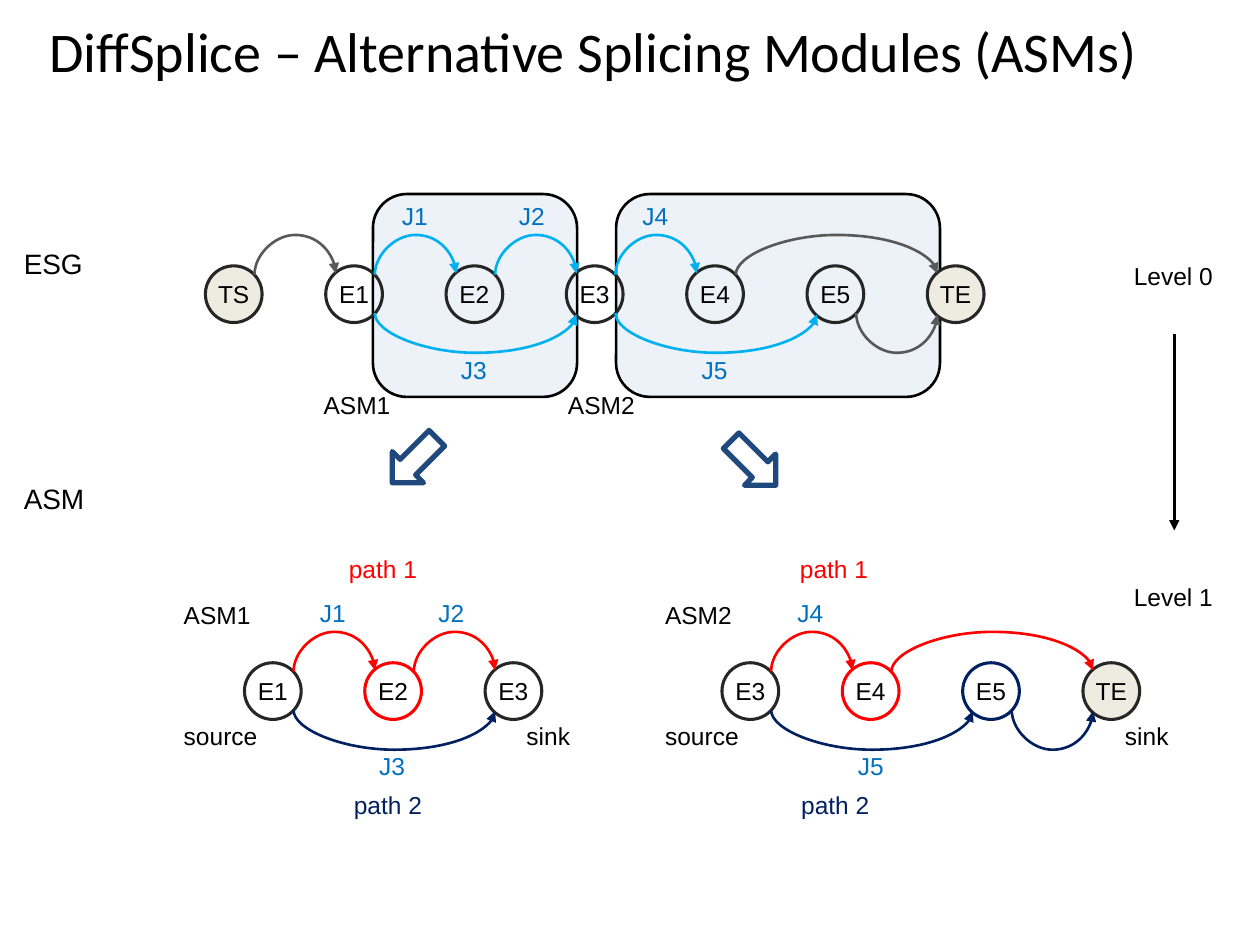
import pptx
import pptx.util
import pptx.dml.color
import pptx.enum.shapes
import pptx.enum.text
import pptx.oxml
import pptx.oxml.ns
from dataclasses import dataclass
from lxml import etree

Inches = pptx.util.Inches
Pt = pptx.util.Pt
SHAPE = pptx.enum.shapes.MSO_SHAPE
LINE = pptx.enum.shapes.MSO_CONNECTOR
ALIGN = pptx.enum.text.PP_ALIGN
ANCHOR = pptx.enum.text.MSO_ANCHOR
qn = pptx.oxml.ns.qn


@dataclass(frozen=True)
class Theme:
    font: str = "Arial"
    title_font: str = "Calibri"
    title: int = 32
    heading: int = 16
    body: int = 14
    black: str = "000000"
    white: str = "FFFFFF"
    ring: str = "262626"
    gray: str = "595959"
    sky: str = "00B0F0"
    blue: str = "0070C0"
    navy: str = "002060"
    red: str = "FF0000"
    panel: str = "DCE6F2"
    terminal: str = "EEECE1"
    arrow: str = "1F497D"


T = Theme()
NODE = 0.45    # node diameter
PITCH = 0.955  # distance between neighbouring nodes
BULGE = 0.32   # height of a junction arc
RISE = 0.01    # height difference between the ends of an arc


def rgb(color):
    return pptx.dml.color.RGBColor.from_string(color)


def add_run(p, text, size=T.body, color=T.black, font=T.font):
    r = p.add_run()
    r.text = text
    r.font.size = Pt(size)
    r.font.name = font
    r.font.color.rgb = rgb(color)


def add_label(s, text, x, y, w, color=T.black, size=T.body):
    tb = s.shapes.add_textbox(Inches(x), Inches(y), Inches(w),
                              Inches(0.37 if size == T.heading else 0.34))
    tf = tb.text_frame
    tf.word_wrap = False
    tf.auto_size = pptx.enum.text.MSO_AUTO_SIZE.SHAPE_TO_FIT_TEXT
    add_run(tf.paragraphs[0], text, size, color)


def add_shape(s, kind, x, y, w, h, line, weight, fill=None):
    sp = s.shapes.add_shape(kind, Inches(x), Inches(y), Inches(w), Inches(h))
    sp.shadow.inherit = False
    if fill:
        sp.fill.solid()
        sp.fill.fore_color.rgb = rgb(fill)
    else:
        sp.fill.background()
    sp.line.color.rgb = rgb(line)
    sp.line.width = Pt(weight)
    return sp


def add_panel(s, x, w):
    sp = add_shape(s, SHAPE.ROUNDED_RECTANGLE, x, 1.54, w, 1.61, T.black, 1.5, T.panel)
    color = sp.fill._xPr.find(qn("a:solidFill"))[0]
    etree.SubElement(color, qn("a:alpha"), val="50000")


def add_node(s, text, x, y, line):
    fill = T.terminal if text in ("TS", "TE") else None
    sp = add_shape(s, SHAPE.OVAL, x, y, NODE, NODE, line, 1.75, fill)
    tf = sp.text_frame
    tf.margin_left = tf.margin_right = tf.margin_top = tf.margin_bottom = 0
    tf.vertical_anchor = ANCHOR.MIDDLE
    p = tf.paragraphs[0]
    p.alignment = ALIGN.CENTER
    add_run(p, text)


def add_arrow(s, kind, x1, y1, x2, y2, color):
    c = s.shapes.add_connector(kind, Inches(x1), Inches(y1), Inches(x2), Inches(y2))
    c.line.color.rgb = rgb(color)
    c.line.width = Pt(1.5)
    etree.SubElement(c.line._get_or_add_ln(), qn("a:tailEnd"), type="triangle")
    etree.SubElement(c._element.spPr, qn("a:effectLst"))
    return c


def add_arc(s, x1, x2, y, up, color):
    """Curved arrow from x1 to x2, made from a thin connector turned on its side."""
    length = x2 - x1
    left, top = (x1 + x2 - RISE) / 2, y - length / 2
    c = add_arrow(s, LINE.CURVE, left, top, left + RISE, top + length, color)
    xfrm = c._element.spPr.find(qn("a:xfrm"))
    xfrm.set("rot", str((90 if up else 270) * 60000))
    xfrm.set("flipH", "1")
    if up:
        xfrm.set("flipV", "1")
    guides = c._element.spPr.find(qn("a:prstGeom")).get_or_add_avLst()
    etree.SubElement(guides, qn("a:gd"), name="adj1",
                     fmla=f"val {round(BULGE / RISE * 100000)}")


def add_graph(s, left, top, nodes, arcs, junctions):
    """nodes: (text, ring); arcs: (from, to, up, color); junctions: (text, x, up)."""
    for i, (text, ring) in enumerate(nodes):
        add_node(s, text, left + i * PITCH, top, ring)
    for start, end, up, color in arcs:
        add_arc(s, left + start * PITCH + 0.39, left + end * PITCH + 0.08,
                top + (0.065 if up else 0.38), up, color)
    for text, x, up in junctions:
        add_label(s, text, x, top + (-0.56 if up else 0.655), 0.41, T.blue)


def add_title(s, text):
    sp = s.shapes.title
    sp.left, sp.top, sp.width, sp.height = Inches(0.29), 0, Inches(9.71), Inches(0.79)
    tf = sp.text_frame
    tf.vertical_anchor = ANCHOR.MIDDLE
    p = tf.paragraphs[0]
    p.alignment = ALIGN.LEFT
    add_run(p, text, T.title, font=T.title_font)


def main():
    prs = pptx.Presentation()
    prs.slide_width, prs.slide_height = Inches(10), Inches(7.5)
    s = prs.slides.add_slide(prs.slide_layouts[5])
    add_title(s, "DiffSplice – Alternative Splicing Modules (ASMs)")

    # Level 0: splice graph with its two modules marked
    add_panel(s, 4.89, 2.57)
    add_panel(s, 2.96, 1.62)
    add_graph(s, 1.63, 2.11,
              [(n, T.ring) for n in ("TS", "E1", "E2", "E3", "E4", "E5", "TE")],
              [(0, 1, True, T.gray), (1, 2, True, T.sky), (2, 3, True, T.sky),
               (3, 4, True, T.sky), (4, 6, True, T.gray), (1, 3, False, T.sky),
               (3, 5, False, T.sky), (5, 6, False, T.gray)],
              [("J1", 3.09, True), ("J2", 4.02, True), ("J4", 5, True),
               ("J3", 3.56, False), ("J5", 5.47, False)])

    # Level 1: one graph per module
    add_graph(s, 1.94, 5.26,
              [("E1", T.ring), ("E2", T.red), ("E3", T.ring)],
              [(0, 1, True, T.red), (1, 2, True, T.red), (0, 2, False, T.navy)],
              [("J1", 2.44, True), ("J2", 3.38, True), ("J3", 2.91, False)])
    add_graph(s, 5.73, 5.26,
              [("E3", T.ring), ("E4", T.red), ("E5", T.navy), ("TE", T.ring)],
              [(0, 1, True, T.red), (1, 3, True, T.red),
               (0, 2, False, T.navy), (2, 3, False, T.navy)],
              [("J4", 6.23, True), ("J5", 6.71, False)])

    # Module captions: name, its x at level 0 and level 1, sink x, path x
    for name, x0, x1, sink, path1, path2 in (("ASM1", 2.47, 1.36, 4.08, 2.67, 2.71),
                                             ("ASM2", 4.41, 5.18, 8.83, 6.25, 6.26)):
        add_label(s, name, x0, 3.05, 0.74)
        add_label(s, name, x1, 4.71, 0.74)
        add_label(s, "source", x1, 5.67, 0.79)
        add_label(s, "sink", sink, 5.67, 0.55)
        add_label(s, "path 1", path1, 4.35, 0.75, T.red)
        add_label(s, "path 2", path2, 6.22, 0.75, T.navy)

    # Block arrows from the modules to their graphs
    for x, y, angle in ((3.04, 3.48, 135), (5.73, 3.5, 45)):
        sp = add_shape(s, SHAPE.RIGHT_ARROW, x, y, 0.5, 0.35, T.arrow, 3, T.white)
        sp.rotation = angle

    # Row headings and level scale
    add_label(s, "ESG", 0.09, 1.91, 0.68, size=T.heading)
    add_label(s, "ASM", 0.09, 3.77, 0.69, size=T.heading)
    add_label(s, "Level 0", 8.9, 2.02, 0.83)
    add_label(s, "Level 1", 8.9, 4.57, 0.83)
    add_arrow(s, LINE.STRAIGHT, 9.32, 2.65, 9.32, 4.21, T.black)

    prs.save("out.pptx")


if __name__ == "__main__":
    main()
